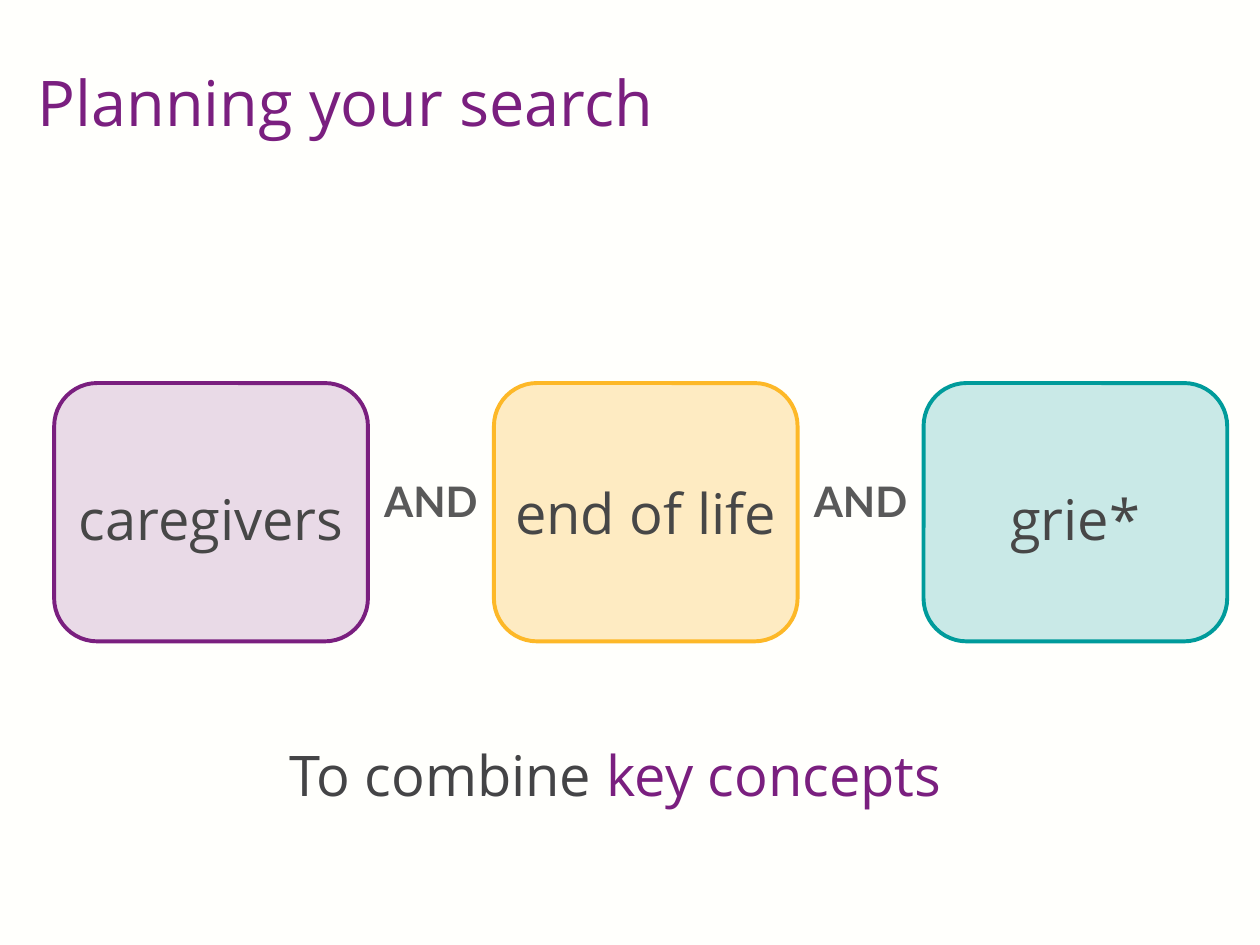
from lxml import etree
from pptx import Presentation
from pptx.dml.color import RGBColor
from pptx.enum.shapes import MSO_SHAPE
from pptx.enum.text import MSO_ANCHOR, MSO_AUTO_SIZE, PP_ALIGN
from pptx.oxml.ns import qn
from pptx.util import Inches, Pt

ROUNDED = MSO_SHAPE.ROUNDED_RECTANGLE
TOP, MIDDLE = MSO_ANCHOR.TOP, MSO_ANCHOR.MIDDLE
LEFT, CENTER = PP_ALIGN.LEFT, PP_ALIGN.CENTER
NO_AUTOFIT = MSO_AUTO_SIZE.NONE

IVORY = RGBColor(0xFF, 0xFF, 0xFC)
PURPLE = RGBColor(0x7A, 0x1F, 0x7F)
AMBER = RGBColor(0xFD, 0xB8, 0x28)
TEAL = RGBColor(0x00, 0x9B, 0x9B)
CHARCOAL = RGBColor(0x47, 0x47, 0x47)
SLATE = RGBColor(0x44, 0x44, 0x46)
GRAY = RGBColor(0x59, 0x59, 0x59)

TITLE_FONT = {"name": "Open Sans", "size": Pt(36), "bold": False}
BODY_FONT = {"name": "Open Sans", "size": Pt(32), "bold": False}
OPERATOR_FONT = {"name": "Lato", "size": Pt(24), "bold": True}

# Concept, colour, fill opacity in percent, width, top inset
CONCEPTS = [
    ("caregivers", PURPLE, 16, 2.49, 0.15),
    ("end of life", AMBER, 27, 2.41, 0.05),
    ("grie*", TEAL, 21, 2.41, 0.15),
]
OPERATOR_WIDTH = 1.0


def set_attributes(target, values):
    for name, value in values.items():
        setattr(target, name, value)


def write_text(shape, runs, font, alignment, anchor, insets, spacing=None):
    """Fill a shape with one paragraph; insets are left, top, right, bottom."""
    frame = shape.text_frame
    left, top, right, bottom = map(Inches, insets)
    set_attributes(frame, {
        "word_wrap": True, "auto_size": NO_AUTOFIT, "vertical_anchor": anchor,
        "margin_left": left, "margin_top": top,
        "margin_right": right, "margin_bottom": bottom,
    })
    paragraph = frame.paragraphs[0]
    set_attributes(paragraph, {"alignment": alignment, "line_spacing": spacing})
    for text, color in runs:
        run = paragraph.add_run()
        run.text = text
        set_attributes(run.font, font)
        run.font.color.rgb = color


def set_opacity(shape, percent):
    color = shape.fill._xPr.find(qn("a:solidFill"))[0]
    etree.SubElement(color, qn("a:alpha"), val=str(percent * 1000))


def add_title(slide, left, top, width, height):
    title = slide.shapes.title
    set_attributes(title, {
        "left": Inches(left), "top": Inches(top),
        "width": Inches(width), "height": Inches(height),
    })
    write_text(title, [("Planning your search", PURPLE)], TITLE_FONT,
               LEFT, TOP, (0.1, 0.31, 0.1, 0.05), 1.5)


def add_concept(slide, box, text, color, opacity, top_inset):
    card = slide.shapes.add_shape(ROUNDED, *map(Inches, box))
    card.shadow.inherit = False
    card.fill.solid()
    card.fill.fore_color.rgb = color
    set_opacity(card, opacity)
    card.line.color.rgb = color
    card.line.width = Pt(2.25)
    write_text(card, [(text, CHARCOAL)], BODY_FONT, CENTER, MIDDLE,
               (0.05, top_inset, 0.05, 0.05))


def add_operator(slide, box):
    label = slide.shapes.add_textbox(*map(Inches, box))
    write_text(label, [("AND", GRAY)], OPERATOR_FONT, CENTER, MIDDLE,
               (0.1, 0.05, 0.1, 0.23))


def add_concept_row(slide, left, top, height):
    """Place the concept cards in a row, with an operator in each gap."""
    operator_height = 0.79
    operator_top = top + (height - operator_height) / 2
    for index, (text, color, opacity, width, top_inset) in enumerate(CONCEPTS):
        if index:
            add_operator(slide, (left, operator_top, OPERATOR_WIDTH, operator_height))
            left += OPERATOR_WIDTH
        add_concept(slide, (left, top, width, height), text, color, opacity, top_inset)
        left += width


def add_caption(slide, left, top, width, height):
    caption = slide.shapes.add_textbox(*map(Inches, (left, top, width, height)))
    write_text(caption, [("To combine ", SLATE), ("key concepts", PURPLE)],
               BODY_FONT, CENTER, TOP, (0.1, 0.05, 0.1, 0.05), 1.5)


def main():
    presentation = Presentation()
    presentation.slide_width = Inches(10)
    presentation.slide_height = Inches(7.5)
    title_only = presentation.slide_layouts[5]
    slide = presentation.slides.add_slide(title_only)
    slide.background.fill.solid()
    slide.background.fill.fore_color.rgb = IVORY

    add_title(slide, 0.2, -0.11, 9.21, 1.1)
    add_concept_row(slide, 0.43, 3.04, 2.05)
    add_caption(slide, 0.16, 5.56, 9.45, 0.79)
    presentation.save("out.pptx")


if __name__ == "__main__":
    main()
